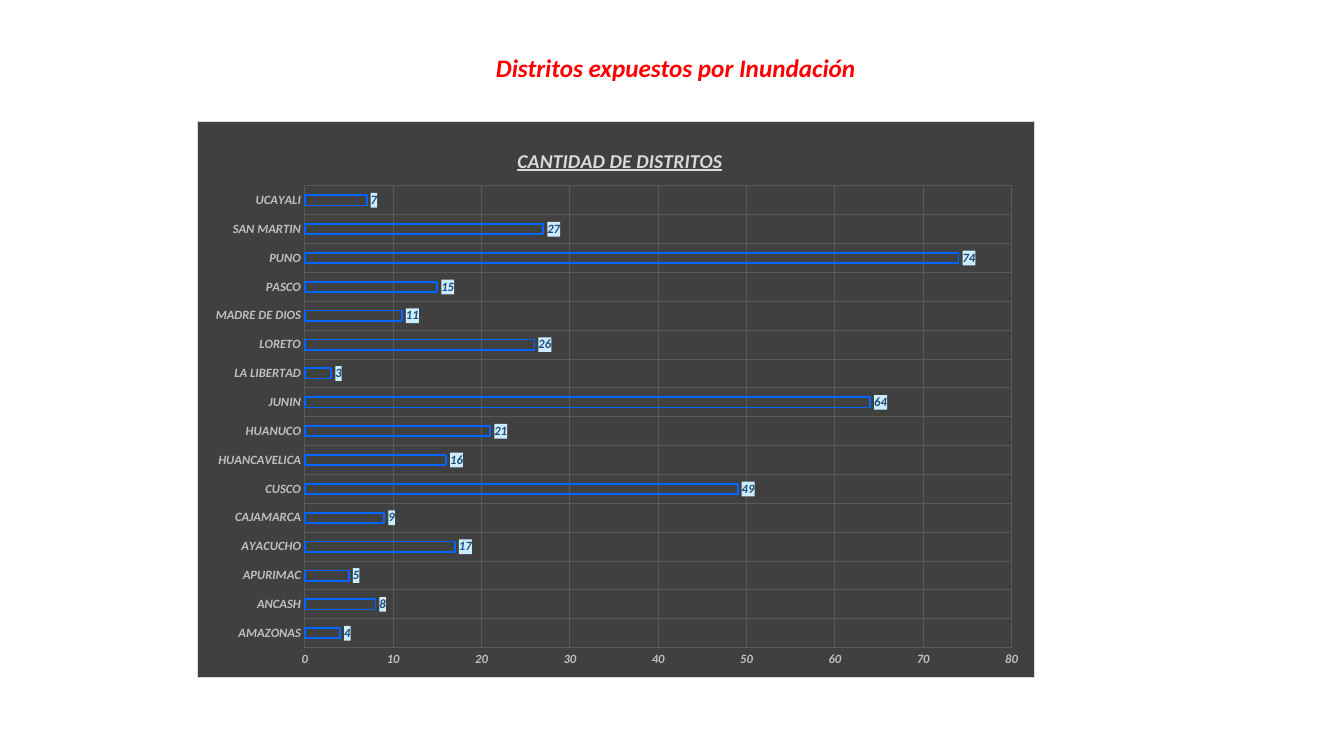
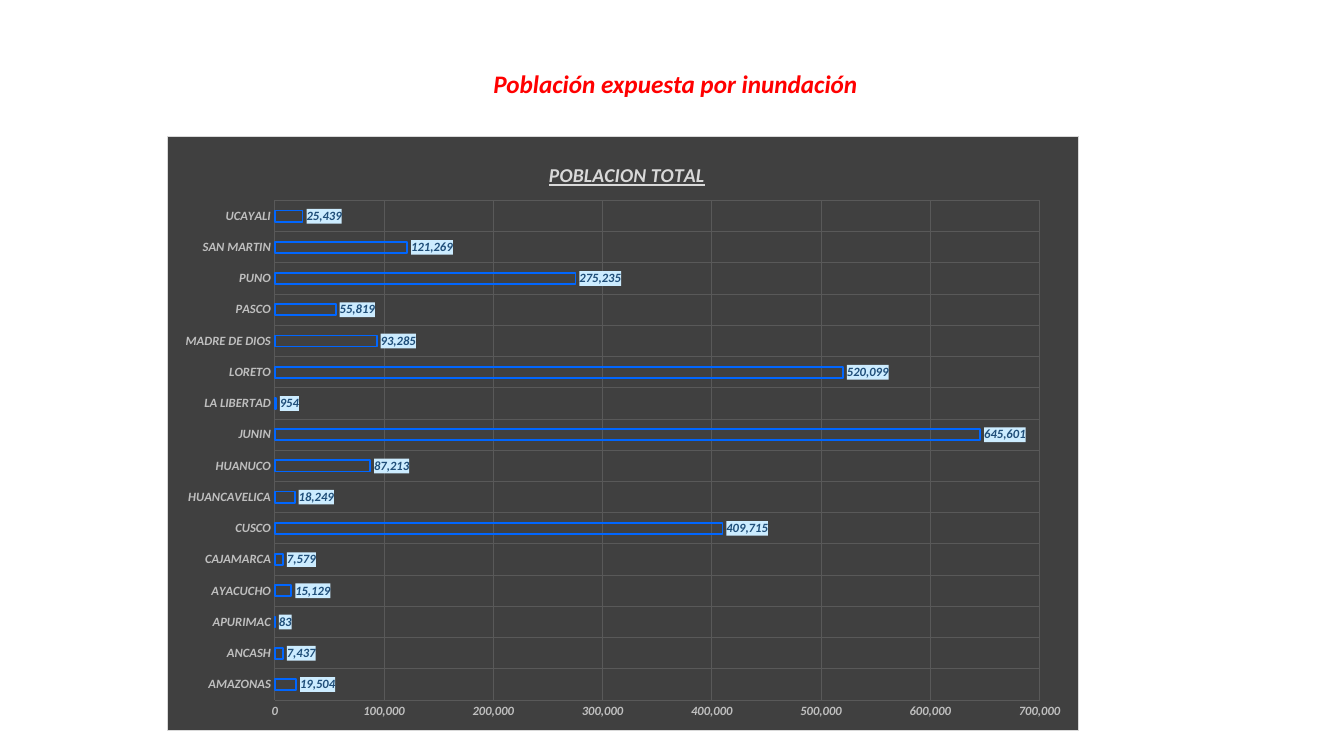
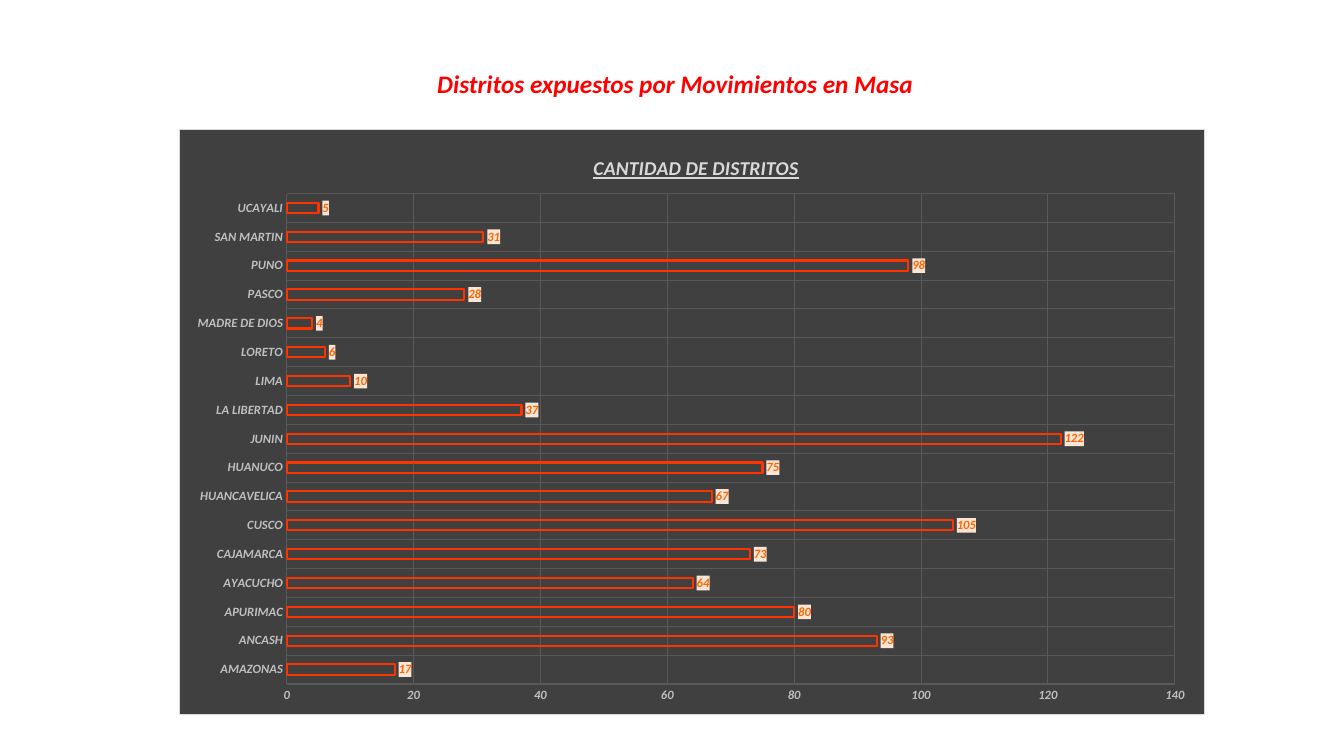
"""Build three slides of bar charts on districts and population exposed to hazards."""
from dataclasses import dataclass

from lxml import etree
from pptx import Presentation
from pptx.chart.axis import CategoryAxis, ValueAxis
from pptx.chart.chart import Chart
from pptx.chart.data import CategoryChartData
from pptx.chart.series import BarSeries
from pptx.dml.color import RGBColor
from pptx.enum.chart import XL_CHART_TYPE, XL_LABEL_POSITION, XL_TICK_MARK
from pptx.enum.text import MSO_AUTO_SIZE, PP_ALIGN
from pptx.oxml import parse_xml
from pptx.oxml.ns import nsdecls, qn
from pptx.slide import Slide
from pptx.text.text import Font
from pptx.util import Pt


@dataclass(frozen=True)
class Theme:
    font: str = "Calibri"
    heading: str = "FF0000"
    panel: str = "404040"
    border: str = "D9D9D9"
    grid: str = "595959"
    axis_text: str = "BFBFBF"
    heading_size: float = 18
    chart_title_size: float = 14
    chart_size: float = 10
    label_size: float = 9
    hairline: float = 0.75
    number_format: str = "#,##0"


@dataclass(frozen=True)
class Box:
    left: float
    top: float
    width: float
    height: float


@dataclass(frozen=True)
class Palette:
    outline: str
    outline_width: float
    label_text: str
    label_fill: str


@dataclass(frozen=True)
class ChartSlide:
    heading: str
    heading_box: Box
    title: str
    title_width: float
    chart_box: Box
    right_margin: float
    values: dict[str, int]
    axis_max: int
    axis_step: int
    palette: Palette


THEME = Theme()
FLOOD = Palette("0066FF", 1.25, "1F4E79", "CCECFF")
LANDSLIDE = Palette("FF3300", 1.5, "FF6600", "FBE5D6")
PLOT_LEFT, PLOT_TOP, PLOT_BOTTOM = 76.5, 46, 21.5
TITLE_TOP = 15.5

SLIDES = [
    ChartSlide(
        "Distritos expuestos por Inundación", Box(345.5, 34, 274.5, 29),
        "CANTIDAD DE DISTRITOS", 146.5, Box(141, 86.5, 598.5, 398), 16.5,
        {"AMAZONAS": 4, "ANCASH": 8, "APURIMAC": 5, "AYACUCHO": 17,
         "CAJAMARCA": 9, "CUSCO": 49, "HUANCAVELICA": 16, "HUANUCO": 21,
         "JUNIN": 64, "LA LIBERTAD": 3, "LORETO": 26, "MADRE DE DIOS": 11,
         "PASCO": 15, "PUNO": 74, "SAN MARTIN": 27, "UCAYALI": 7},
        80, 10, FLOOD,
    ),
    ChartSlide(
        "Población expuesta por inundación", Box(343.5, 45.5, 278, 29),
        "POBLACION TOTAL", 111.5, Box(119.5, 97, 651.5, 425), 28,
        {"AMAZONAS": 19504, "ANCASH": 7437, "APURIMAC": 83, "AYACUCHO": 15129,
         "CAJAMARCA": 7579, "CUSCO": 409715, "HUANCAVELICA": 18249,
         "HUANUCO": 87213, "JUNIN": 645601, "LA LIBERTAD": 954,
         "LORETO": 520099, "MADRE DE DIOS": 93285, "PASCO": 55819,
         "PUNO": 275235, "SAN MARTIN": 121269, "UCAYALI": 25439},
        700000, 100000, FLOOD,
    ),
    ChartSlide(
        "Distritos expuestos por Movimientos en Masa", Box(303, 45.5, 358.5, 29),
        "CANTIDAD DE DISTRITOS", 146.5, Box(128, 92, 733, 418.5), 21.5,
        {"AMAZONAS": 17, "ANCASH": 93, "APURIMAC": 80, "AYACUCHO": 64,
         "CAJAMARCA": 73, "CUSCO": 105, "HUANCAVELICA": 67, "HUANUCO": 75,
         "JUNIN": 122, "LA LIBERTAD": 37, "LIMA": 10, "LORETO": 6,
         "MADRE DE DIOS": 4, "PASCO": 28, "PUNO": 98, "SAN MARTIN": 31,
         "UCAYALI": 5},
        140, 20, LANDSLIDE,
    ),
]


def style_font(font: Font, size: float, color: str) -> None:
    font.name = THEME.font
    font.size = Pt(size)
    font.bold = font.italic = True
    font.color.rgb = RGBColor.from_string(color)


def fill_props(fill: str, border: str | None = None) -> etree._Element:
    color = '<a:solidFill><a:srgbClr val="{}"/></a:solidFill>'
    line = ""
    if border:
        line = f'<a:ln w="{Pt(THEME.hairline)}">{color.format(border)}</a:ln>'
    return parse_xml(
        f'<c:spPr {nsdecls("c", "a")}>{color.format(fill)}{line}</c:spPr>'
    )


def place(parent: etree._Element, index: int, target: str, **fractions: float) -> None:
    for old in parent.findall(qn("c:layout")):
        parent.remove(old)
    inner = f'<c:layoutTarget val="{target}"/>' if target else ""
    modes = '<c:xMode val="edge"/><c:yMode val="edge"/>'
    sizes = "".join(f'<c:{k} val="{v:.4f}"/>' for k, v in fractions.items())
    parent.insert(index, parse_xml(
        f'<c:layout {nsdecls("c")}><c:manualLayout>{inner}{modes}{sizes}'
        "</c:manualLayout></c:layout>"
    ))


def add_heading(s: Slide, text: str, box: Box) -> None:
    sp = s.shapes.add_textbox(Pt(box.left), Pt(box.top), Pt(box.width), Pt(box.height))
    tf = sp.text_frame
    tf.word_wrap = False
    tf.auto_size = MSO_AUTO_SIZE.SHAPE_TO_FIT_TEXT
    p = tf.paragraphs[0]
    p.alignment = PP_ALIGN.CENTER
    r = p.add_run()
    r.text = text
    style_font(r.font, THEME.heading_size, THEME.heading)


def style_axis(axis: CategoryAxis | ValueAxis) -> None:
    axis.major_tick_mark = axis.minor_tick_mark = XL_TICK_MARK.NONE
    axis.format.line.fill.background()
    axis.has_major_gridlines = True
    grid = axis.major_gridlines.format.line
    grid.width = Pt(THEME.hairline)
    grid.color.rgb = RGBColor.from_string(THEME.grid)
    style_font(axis.tick_labels.font, THEME.label_size, THEME.axis_text)


def style_series(series: BarSeries, palette: Palette) -> None:
    series.format.fill.background()
    series.format.line.width = Pt(palette.outline_width)
    series.format.line.color.rgb = RGBColor.from_string(palette.outline)
    labels = series.data_labels
    labels.show_value = True
    labels.position = XL_LABEL_POSITION.OUTSIDE_END
    labels.number_format = THEME.number_format
    labels.number_format_is_linked = False
    style_font(labels.font, THEME.label_size, palette.label_text)
    txt = labels._element.find(qn("c:txPr"))
    txt.addprevious(fill_props(palette.label_fill))


def add_title(chart: Chart, item: ChartSlide) -> None:
    chart.has_title = True
    title = chart.chart_title
    title.include_in_layout = False
    r = title.text_frame.paragraphs[0].add_run()
    r.text = item.title
    style_font(r.font, THEME.chart_title_size, THEME.border)
    r.font.underline = True
    box = item.chart_box
    place(title._element, 1, "",
          x=(box.width - item.title_width) / 2 / box.width,
          y=TITLE_TOP / box.height)


def add_bar_chart(s: Slide, item: ChartSlide) -> None:
    data = CategoryChartData(number_format=THEME.number_format)
    data.categories = list(item.values)
    data.add_series("Series 1", list(item.values.values()))
    box = item.chart_box
    chart = s.shapes.add_chart(
        XL_CHART_TYPE.BAR_CLUSTERED, Pt(box.left), Pt(box.top),
        Pt(box.width), Pt(box.height), data,
    ).chart
    chart.has_legend = False
    chart.font.name = THEME.font
    chart.font.size = Pt(THEME.chart_size)
    chart.element.find(qn("c:txPr")).addprevious(fill_props(THEME.panel, THEME.border))
    add_title(chart, item)

    plot = chart.plots[0]
    plot.gap_width = 182
    plot.overlap = -50
    plot.vary_by_categories = False
    style_series(plot.series[0], item.palette)
    style_axis(chart.category_axis)
    axis = chart.value_axis
    style_axis(axis)
    axis.minimum_scale = 0
    axis.maximum_scale = item.axis_max
    axis.major_unit = item.axis_step
    axis.tick_labels.number_format = THEME.number_format
    axis.tick_labels.number_format_is_linked = False
    area = chart.element.find(f'{qn("c:chart")}/{qn("c:plotArea")}')
    place(area, 0, "inner",
          x=PLOT_LEFT / box.width, y=PLOT_TOP / box.height,
          w=(box.width - PLOT_LEFT - item.right_margin) / box.width,
          h=(box.height - PLOT_TOP - PLOT_BOTTOM) / box.height)


def main() -> None:
    prs = Presentation()
    prs.slide_width, prs.slide_height = Pt(960), Pt(540)
    for item in SLIDES:
        s = prs.slides.add_slide(prs.slide_layouts[6])
        add_heading(s, item.heading, item.heading_box)
        add_bar_chart(s, item)
    prs.save("out.pptx")


if __name__ == "__main__":
    main()
